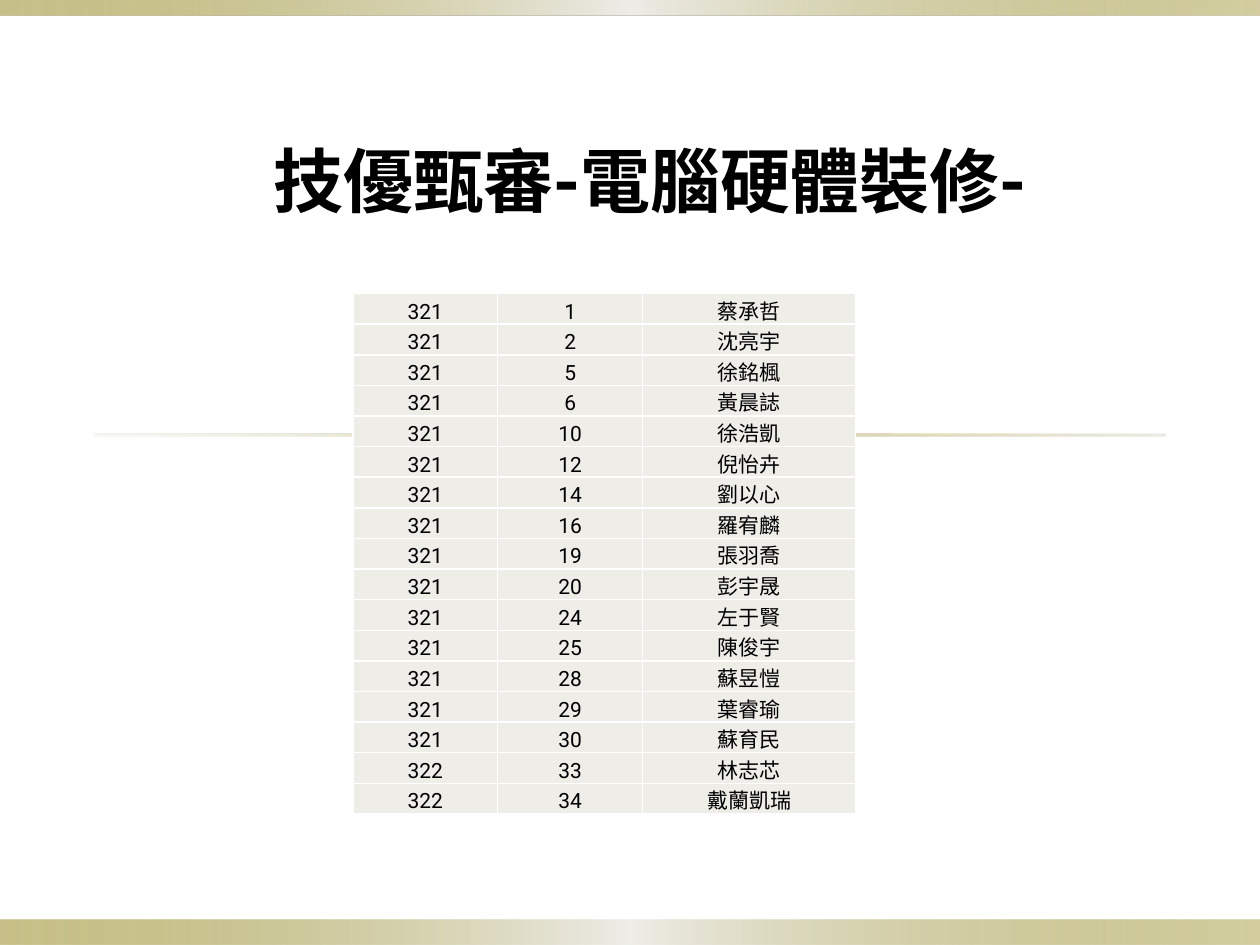
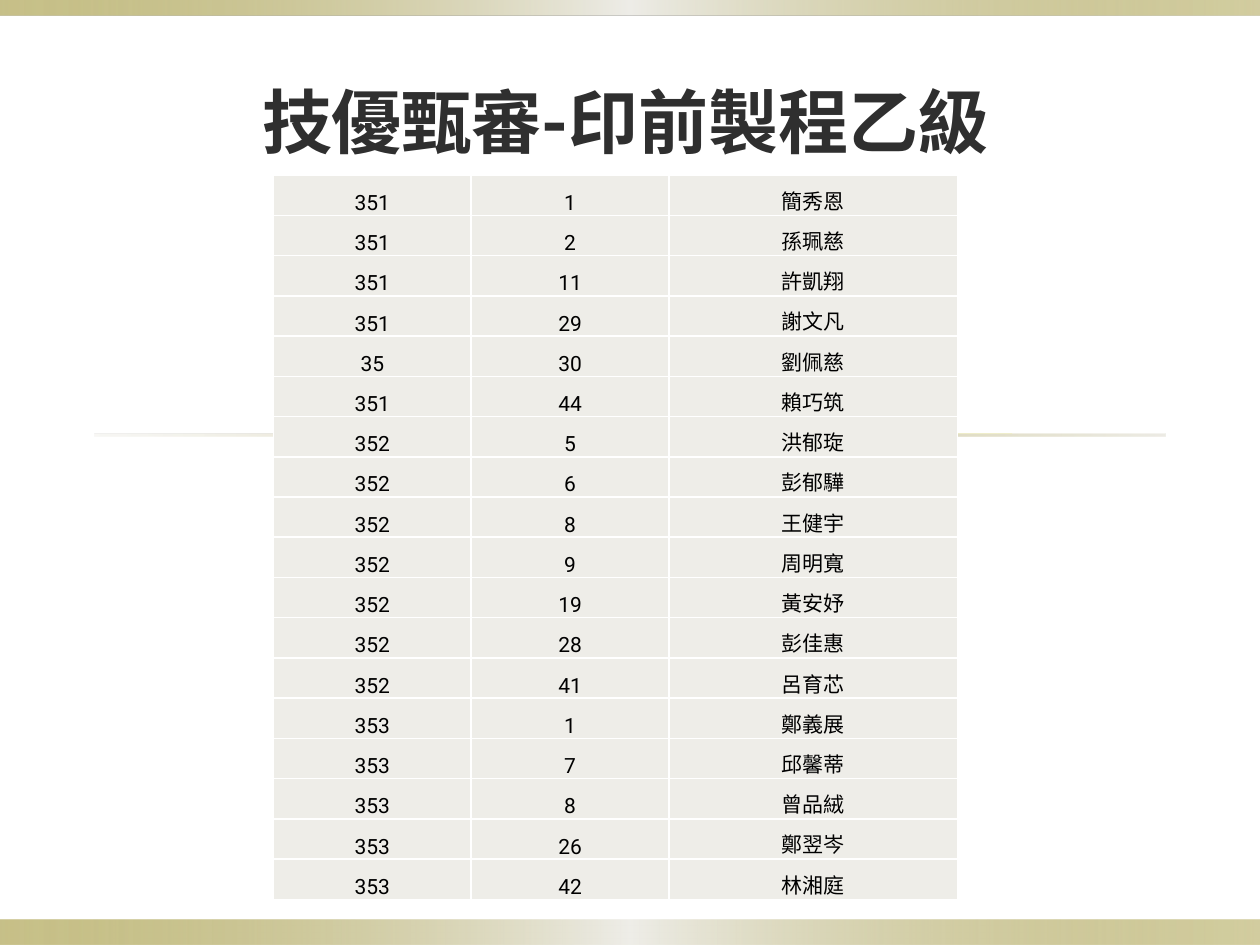
from dataclasses import dataclass

from pptx import Presentation
from pptx.dml.color import RGBColor
from pptx.enum.shapes import MSO_SHAPE as Shape
from pptx.enum.text import MSO_ANCHOR as Anchor, PP_ALIGN as Align
from pptx.oxml import parse_xml
from pptx.oxml.ns import nsdecls
from pptx.util import Inches, Pt


@dataclass(frozen=True)
class Theme:
    font: str = "Roboto"
    title_size: int = 40
    cell_size: int = 12
    border_width: int = 1
    background: str = "FFFFFF"
    border: str = "FFFFFF"
    cell: str = "EEEDE8"
    text: str = "000000"
    soft_title: str = "2F2F2F"
    # Gradient stops: position, colour and opacity, both numbers in percent
    band: tuple = ((0, "918415", 50), (50, "EEEDE8", 100), (100, "918415", 40))
    rule: tuple = ((0, "DCD9CC", 20), (50, "918415", 40), (100, "DCD9CC", 50))


THEME = Theme()
SLIDE_WIDTH, SLIDE_HEIGHT = 10, 7.5

HARDWARE_STUDENTS = (
    ("321", "1", "蔡承哲"),
    ("321", "2", "沈亮宇"),
    ("321", "5", "徐銘楓"),
    ("321", "6", "黃晨誌"),
    ("321", "10", "徐浩凱"),
    ("321", "12", "倪怡卉"),
    ("321", "14", "劉以心"),
    ("321", "16", "羅宥麟"),
    ("321", "19", "張羽喬"),
    ("321", "20", "彭宇晟"),
    ("321", "24", "左于賢"),
    ("321", "25", "陳俊宇"),
    ("321", "28", "蘇昱愷"),
    ("321", "29", "葉睿瑜"),
    ("321", "30", "蘇育民"),
    ("322", "33", "林志芯"),
    ("322", "34", "戴蘭凱瑞"),
)
PREPRESS_STUDENTS = (
    ("351", "1", "簡秀恩"),
    ("351", "2", "孫珮慈"),
    ("351", "11", "許凱翔"),
    ("351", "29", "謝文凡"),
    ("35", "30", "劉佩慈"),
    ("351", "44", "賴巧筑"),
    ("352", "5", "洪郁琁"),
    ("352", "6", "彭郁驊"),
    ("352", "8", "王健宇"),
    ("352", "9", "周明寬"),
    ("352", "19", "黃安妤"),
    ("352", "28", "彭佳惠"),
    ("352", "41", "呂育芯"),
    ("353", "1", "鄭義展"),
    ("353", "7", "邱馨蒂"),
    ("353", "8", "曾品絨"),
    ("353", "26", "鄭翌岑"),
    ("353", "42", "林湘庭"),
)


def inches(box):
    return [Inches(length) for length in box]


def write_text(paragraph, text, size, color, bold=False):
    paragraph.alignment = Align.CENTER
    run = paragraph.add_run()
    run.text = text
    run.font.name = THEME.font
    run.font.size = Pt(size)
    run.font.bold = bold
    run.font.color.rgb = RGBColor.from_string(color)


def add_gradient_bar(slide, box, stops):
    bar = slide.shapes.add_shape(Shape.RECTANGLE, *inches(box))
    bar.shadow.inherit = False
    bar.line.fill.background()
    stop_xml = "".join(
        f'<a:gs pos="{position * 1000}"><a:srgbClr val="{color}">'
        f'<a:alpha val="{opacity * 1000}"/></a:srgbClr></a:gs>'
        for position, color, opacity in stops
    )
    gradient = parse_xml(
        f'<a:gradFill {nsdecls("a")} rotWithShape="1"><a:gsLst>{stop_xml}</a:gsLst>'
        '<a:lin ang="0" scaled="1"/></a:gradFill>'
    )
    bar._element.spPr.prstGeom.addnext(gradient)


def add_frame(slide):
    """Draw the background, edge bands and middle rule every slide shares."""
    fill = slide.background.fill
    fill.solid()
    fill.fore_color.rgb = RGBColor.from_string(THEME.background)
    add_gradient_bar(slide, (0, SLIDE_HEIGHT - 0.2, SLIDE_WIDTH, 0.2), THEME.band)
    add_gradient_bar(slide, (0, 0, SLIDE_WIDTH, 0.12), THEME.band)
    add_gradient_bar(slide, (0.75, 3.44, SLIDE_WIDTH - 1.5, 0.02), THEME.rule)


def add_title(slide, box, text, color):
    frame = slide.shapes.add_textbox(*inches(box)).text_frame
    frame.word_wrap = True
    frame.vertical_anchor = Anchor.MIDDLE
    write_text(frame.paragraphs[0], text, THEME.title_size, color, bold=True)


def add_cell_borders(cell):
    properties = cell._tc.get_or_add_tcPr()
    for index, side in enumerate(("lnL", "lnR", "lnT", "lnB")):
        border = parse_xml(
            f'<a:{side} {nsdecls("a")} w="{Pt(THEME.border_width)}"><a:solidFill>'
            f'<a:srgbClr val="{THEME.border}"/></a:solidFill></a:{side}>'
        )
        properties.insert(index, border)


def fill_cell(cell, text):
    cell.vertical_anchor = Anchor.BOTTOM
    cell.margin_left = cell.margin_right = cell.margin_top = Inches(0.01)
    cell.margin_bottom = 0
    cell.fill.solid()
    cell.fill.fore_color.rgb = RGBColor.from_string(THEME.cell)
    add_cell_borders(cell)
    write_text(cell.text_frame.paragraphs[0], text, THEME.cell_size, THEME.text)


def add_student_table(slide, box, students):
    """List class, seat number and name; the name takes the width left over."""
    width, height = box[2:]
    number_width = round(width * 0.289, 2)
    widths = (number_width, number_width, width - 2 * number_width)
    table = slide.shapes.add_table(len(students), len(widths), *inches(box)).table
    table.first_row = table.horz_banding = False
    for column, column_width in zip(table.columns, widths):
        column.width = Inches(column_width)
    for row, student in zip(table.rows, students):
        row.height = Inches(height / len(students))
        for cell, text in zip(row.cells, student):
            fill_cell(cell, text)


def add_student_slide(presentation, title, title_box, title_color, students, table_box):
    slide = presentation.slides.add_slide(presentation.slide_layouts[6])
    add_frame(slide)
    add_title(slide, title_box, title, title_color)
    add_student_table(slide, table_box, students)


def main():
    presentation = Presentation()
    presentation.slide_width = Inches(SLIDE_WIDTH)
    presentation.slide_height = Inches(SLIDE_HEIGHT)
    add_student_slide(
        presentation, "技優甄審-電腦硬體裝修-", (0.91, 0.99, 8.5, 0.87), THEME.text,
        HARDWARE_STUDENTS, (2.8, 2.33, 3.99, 4.13),
    )
    add_student_slide(
        presentation, "技優甄審-印前製程乙級 ", (0.2, 0.52, 9.65, 0.87), THEME.soft_title,
        PREPRESS_STUDENTS, (2.17, 1.39, 5.43, 5.75),
    )
    presentation.save("out.pptx")


if __name__ == "__main__":
    main()
